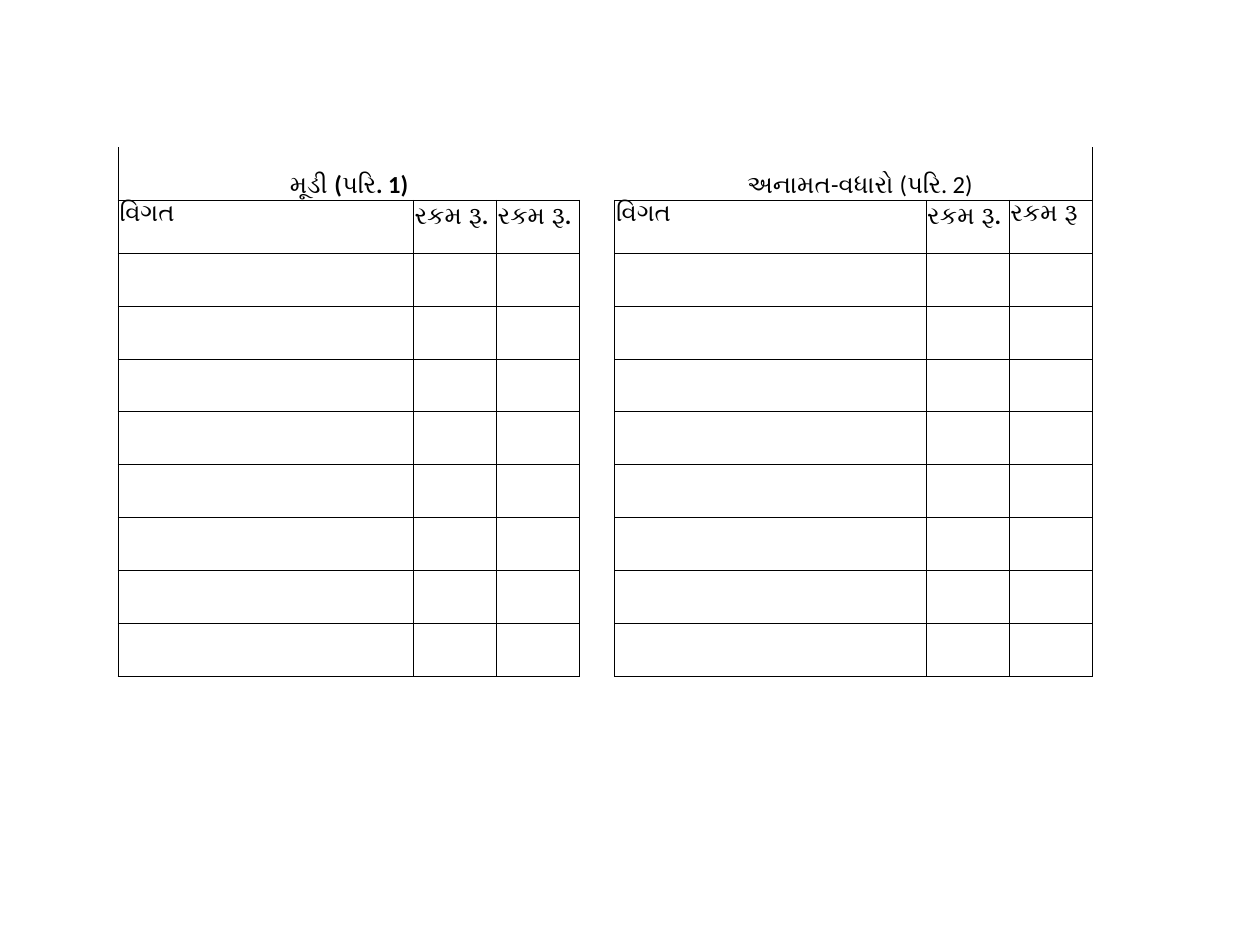
from dataclasses import dataclass
from pptx import Presentation
from pptx import util as u
from pptx.dml import color
from pptx.enum import text
from pptx.oxml import ns
from lxml import etree

BLACK = "000000"
PLAIN = "{2D5ABB26-0587-4C30-8999-92F81FD0307C}"
WIDTHS = [2.34, 0.66, 0.66, 0.28, 2.47, 0.66, 0.66]
ROWS, HEIGHT, GAP = 10, 0.42, 3
THIN, THICK = 0.5, 1


@dataclass
class Block:
    start: int
    title: str
    bold: bool
    inset: float
    heads: list[str]


BLOCKS = [
    Block(0, "મૂડી (પરિ. 1)", True, 0.01, ["વિગત", "રકમ રૂ.", "રકમ રૂ."]),
    Block(4, "અનામત-વધારો (પરિ. 2)", False, 0.11, ["વિગત", "રકમ રૂ.", "રકમ રૂ"]),
]


def paint(code: str) -> color.RGBColor:
    return color.RGBColor.from_string(code)


def rule(cell, sides: dict[str, float]) -> None:
    props = cell._tc.get_or_add_tcPr()
    for side in "LRTB":
        line = etree.SubElement(props, ns.qn(f"a:ln{side}"))
        if side in sides:
            line.set("w", str(u.Pt(sides[side])))
            fill = etree.SubElement(line, ns.qn("a:solidFill"))
            etree.SubElement(fill, ns.qn("a:srgbClr")).set("val", BLACK)
        else:
            line.set("w", "0")
            etree.SubElement(line, ns.qn("a:noFill"))
    cell.fill.background()


def edges(row: int, col: int) -> dict[str, float]:
    left = THICK if col == 0 else THIN
    right = THICK if col == len(WIDTHS) - 1 else THIN
    if col == GAP:
        return {"L": left, "R": right} if row else {}
    if row:
        return {"L": left, "R": right, "T": THIN, "B": THIN}
    sides = {"B": THIN}
    if col == 0:
        sides["L"] = THICK
    if col > GAP:
        sides["R"] = THICK
    return sides


def write(cell, words: str, bold: bool) -> None:
    run = cell.text_frame.paragraphs[0].add_run()
    run.text = words
    run.font.name = "Calibri"
    run.font.size = u.Pt(14)
    run.font.bold = bold
    run.font.color.rgb = paint(BLACK)


def draw(grid, block: Block) -> None:
    first = grid.cell(0, block.start)
    first.merge(grid.cell(0, block.start + len(block.heads) - 1))
    first.vertical_anchor = text.MSO_ANCHOR.BOTTOM
    first.margin_left = u.Inches(block.inset)
    first.text_frame.paragraphs[0].alignment = text.PP_ALIGN.CENTER
    write(first, block.title, block.bold)
    for col, head in enumerate(block.heads, block.start):
        write(grid.cell(1, col), head, True)


def main() -> None:
    deck = Presentation()
    deck.slide_width, deck.slide_height = u.Inches(10), u.Inches(7.5)
    slide = deck.slides.add_slide(deck.slide_layouts[6])
    grid = slide.shapes.add_table(
        ROWS, len(WIDTHS), u.Inches(0.94), u.Inches(1.17),
        u.Inches(sum(WIDTHS)), u.Inches(ROWS * HEIGHT)).table
    grid.first_row = grid.horz_banding = False
    grid._tbl.tblPr.find(ns.qn("a:tableStyleId")).text = PLAIN
    for col, width in enumerate(WIDTHS):
        grid.columns[col].width = u.Inches(width)
    for row in range(ROWS):
        grid.rows[row].height = u.Inches(HEIGHT)
        for col in range(len(WIDTHS)):
            cell = grid.cell(row, col)
            cell.margin_left = cell.margin_right = cell.margin_top = u.Inches(0.01)
            cell.margin_bottom = 0
            rule(cell, edges(row, col))
    for block in BLOCKS:
        draw(grid, block)
    deck.save("out.pptx")


if __name__ == "__main__":
    main()
